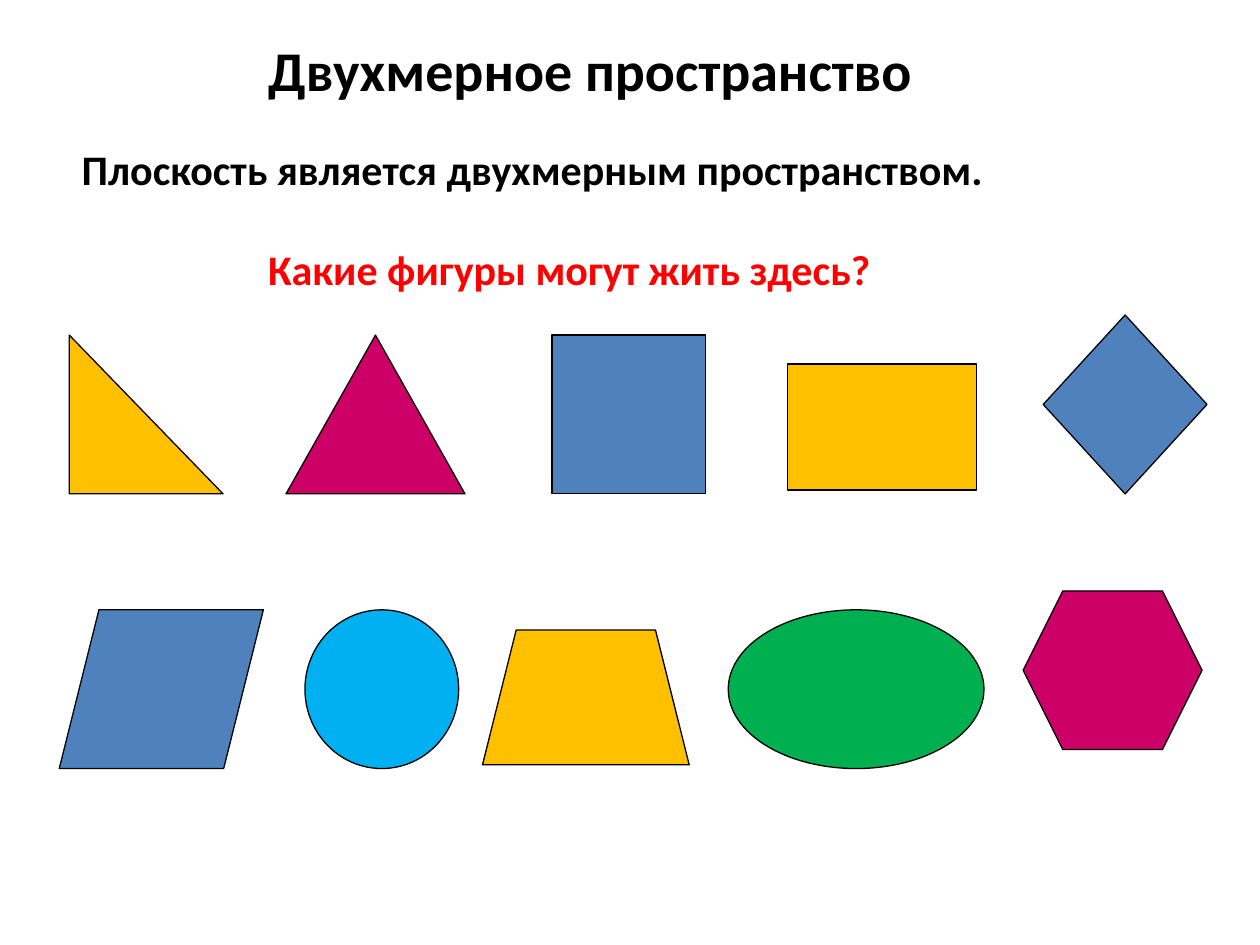
from dataclasses import dataclass

from pptx import Presentation
from pptx.dml.color import RGBColor as Color
from pptx.enum.shapes import MSO_SHAPE as Preset
from pptx.enum.text import MSO_AUTO_SIZE as AutoSize
from pptx.slide import Slide
from pptx.util import Inches, Pt

COLUMNS, ROWS = 100, 75
SLIDE_WIDTH, SLIDE_HEIGHT = Inches(10), Inches(7.5)


@dataclass(frozen=True)
class Theme:
    font: str = "Calibri"
    title_size: int = 32
    body_size: int = 24
    outline_width: float = 0.75
    black: str = "000000"
    red: str = "FF0000"
    blue: str = "4F81BD"
    sky: str = "00B0F0"
    green: str = "00B050"
    gold: str = "FFC000"
    crimson: str = "CC0066"


THEME = Theme()


@dataclass(frozen=True)
class Area:
    """A place on the grid, in columns and rows."""
    column: float
    row: float
    columns: float
    rows: float

    def lengths(self) -> tuple[int, int, int, int]:
        across, down = SLIDE_WIDTH / COLUMNS, SLIDE_HEIGHT / ROWS
        return (round(self.column * across), round(self.row * down),
                round(self.columns * across), round(self.rows * down))


@dataclass(frozen=True)
class Caption:
    text: str
    area: Area
    size: int
    color: str = THEME.black


@dataclass(frozen=True)
class Figure:
    preset: Preset
    area: Area
    fill: str


UPPER_ROW, LOWER_ROW = 26.6, 48.4
SIDE, HEIGHT, WIDE = 12.2, 12.6, 14.2
MARGIN, INDENT = 5.5, 20.3

CAPTIONS = [
    Caption("Двухмерное пространство", Area(INDENT, 2.3, 65, 6.4), THEME.title_size),
    Caption("Какие фигуры могут жить здесь?", Area(INDENT, 18.8, 61.2, 5.1),
            THEME.body_size, THEME.red),
    Caption("Плоскость является двухмерным пространством.",
            Area(MARGIN, 10.9, 91.5, 5.1), THEME.body_size),
]

FIGURES = [
    Figure(Preset.OVAL, Area(24.2, LOWER_ROW, SIDE, HEIGHT), THEME.sky),
    Figure(Preset.RECTANGLE, Area(43.8, UPPER_ROW, SIDE, HEIGHT), THEME.blue),
    Figure(Preset.ISOSCELES_TRIANGLE, Area(22.7, UPPER_ROW, WIDE, HEIGHT), THEME.crimson),
    Figure(Preset.RIGHT_TRIANGLE, Area(MARGIN, UPPER_ROW, SIDE, HEIGHT), THEME.gold),
    Figure(Preset.PARALLELOGRAM, Area(4.7, LOWER_ROW, 16.2, HEIGHT), THEME.blue),
    Figure(Preset.HEXAGON, Area(81.2, 46.9, WIDE, HEIGHT), THEME.crimson),
    Figure(Preset.DIAMOND, Area(82.8, 25, 13, WIDE), THEME.blue),
    Figure(Preset.OVAL, Area(57.8, LOWER_ROW, 20.3, HEIGHT), THEME.green),
    Figure(Preset.RECTANGLE, Area(62.5, 28.9, 15, 10), THEME.gold),
    Figure(Preset.TRAPEZOID, Area(38.3, 50, 16.4, 10.7), THEME.gold),
]


def add_caption(slide: Slide, caption: Caption) -> None:
    frame = slide.shapes.add_textbox(*caption.area.lengths()).text_frame
    frame.word_wrap = True
    frame.auto_size = AutoSize.SHAPE_TO_FIT_TEXT
    run = frame.paragraphs[0].add_run()
    run.text = caption.text
    font_format = {"name": THEME.font, "size": Pt(caption.size), "bold": True}
    for attribute, value in font_format.items():
        setattr(run.font, attribute, value)
    run.font.color.rgb = Color.from_string(caption.color)


def add_figure(slide: Slide, figure: Figure) -> None:
    shape = slide.shapes.add_shape(figure.preset, *figure.area.lengths())
    shape.shadow.inherit = False
    shape.fill.solid()
    shape.fill.fore_color.rgb = Color.from_string(figure.fill)
    shape.line.color.rgb = Color.from_string(THEME.black)
    shape.line.width = Pt(THEME.outline_width)


def main() -> None:
    presentation = Presentation()
    presentation.slide_width, presentation.slide_height = SLIDE_WIDTH, SLIDE_HEIGHT
    slide = presentation.slides.add_slide(presentation.slide_layouts[6])
    for caption in CAPTIONS:
        add_caption(slide, caption)
    for figure in FIGURES:
        add_figure(slide, figure)
    presentation.save("out.pptx")


if __name__ == "__main__":
    main()
